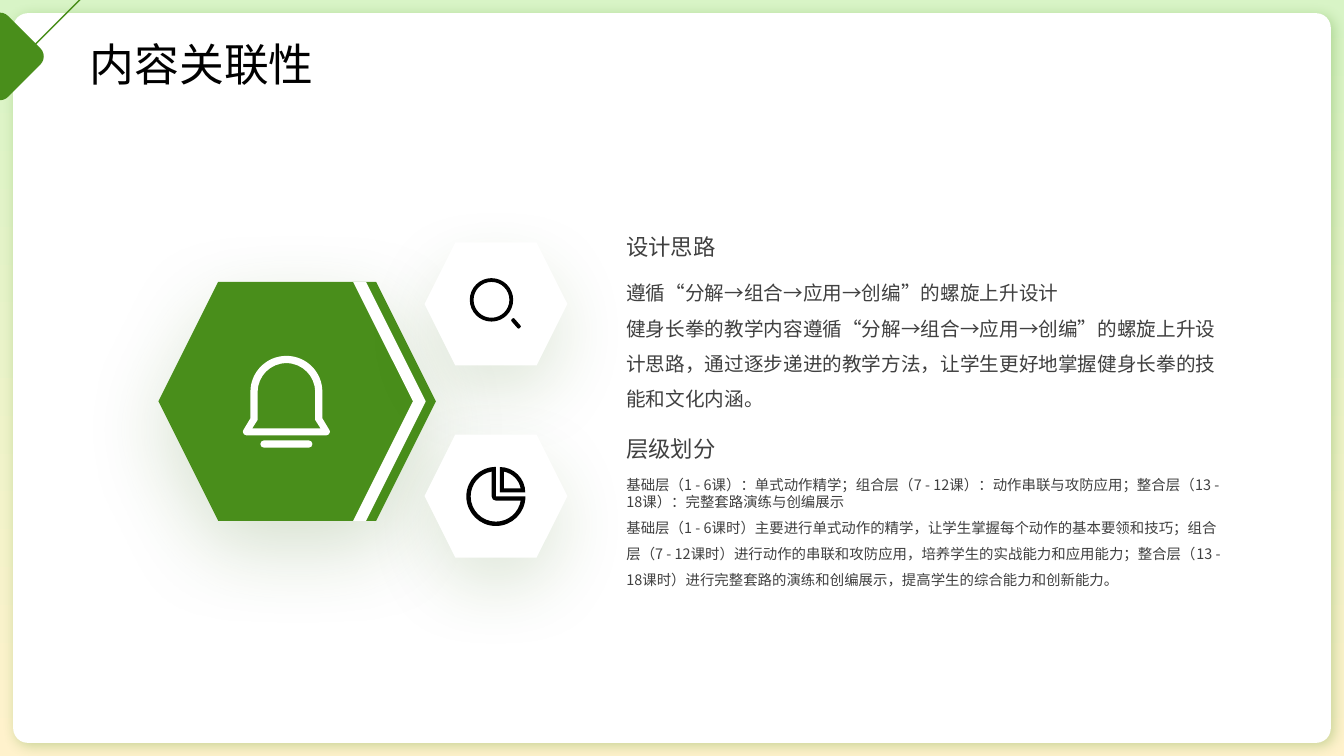
from dataclasses import dataclass
from itertools import chain
from math import cos, radians, sin, tan

from lxml.etree import SubElement
from pptx import Presentation
from pptx.dml.color import RGBColor
from pptx.enum.shapes import MSO_SHAPE
from pptx.enum.text import MSO_ANCHOR, PP_ALIGN
from pptx.oxml.ns import qn
from pptx.util import Pt


@dataclass(frozen=True)
class Theme:
    font: str = "Noto Sans CJK SC"
    green: str = "498E1B"
    shade: str = "376B14"
    white: str = "FFFFFF"
    black: str = "000000"
    gray: str = "404040"
    sand: str = "FFF2CC"
    mint: str = "D8F4C6"
    title: float = 32
    heading: float = 16
    body: float = 14
    detail: float = 10.3


THEME = Theme()

DESIGN_TEXT = (
    "遵循“分解→组合→应用→创编”的螺旋上升设计",
    "健身长拳的教学内容遵循“分解→组合→应用→创编”的螺旋上升设计思路，"
    "通过逐步递进的教学方法，让学生更好地掌握健身长拳的技能和文化内涵。",
)
LEVEL_TEXT = (
    "基础层（1 - 6课）：单式动作精学；组合层（7 - 12课）：动作串联与攻防应用；"
    "整合层（13 - 18课）：完整套路演练与创编展示",
    "基础层（1 - 6课时）主要进行单式动作的精学，让学生掌握每个动作的基本要领和技巧；"
    "组合层（7 - 12课时）进行动作的串联和攻防应用，培养学生的实战能力和应用能力；"
    "整合层（13 - 18课时）进行完整套路的演练和创编展示，提高学生的综合能力和创新能力。",
)


def write_text(shape, lines, size, color=THEME.gray, anchor=MSO_ANCHOR.TOP, spacings=(1.5,)):
    frame = shape.text_frame
    frame.word_wrap = True
    frame.vertical_anchor = anchor
    frame.margin_left = frame.margin_right = frame.margin_top = frame.margin_bottom = 0
    frame.text = "\n".join(lines)
    for paragraph, spacing in zip(frame.paragraphs, spacings):
        paragraph.alignment = PP_ALIGN.LEFT
        paragraph.line_spacing = spacing
        font = paragraph.runs[0].font
        font.size = Pt(size)
        font.name = THEME.font
        font.color.rgb = RGBColor.from_string(color)
        SubElement(font._element, qn("a:ea"), typeface=THEME.font)


def add_text(slide, top, height, lines, **text_format):
    shape = slide.shapes.add_textbox(Pt(447.4), Pt(top), Pt(425.5), Pt(height))
    write_text(shape, lines, **text_format)


def paint(shape, color):
    shape.shadow.inherit = False
    shape.fill.solid()
    shape.fill.fore_color.rgb = RGBColor.from_string(color)
    shape.line.fill.background()


def add_panel(slide, kind, box, color):
    shape = slide.shapes.add_shape(kind, *map(Pt, box))
    paint(shape, color)
    return shape


def cast_shadow(shape, color, opacity, blur, distance, angle):
    effects = shape._element.spPr.find(qn("a:effectLst"))
    shadow = SubElement(
        effects, qn("a:outerShdw"), blurRad=str(Pt(blur)), dist=str(Pt(distance)),
        dir=str(angle * 60000), algn="ctr", rotWithShape="0",
    )
    tint = SubElement(shadow, qn("a:srgbClr"), val=color)
    SubElement(tint, qn("a:alpha"), val=str(opacity * 1000))


def bend_segment(segment, controls, shape):
    segment.tag = qn("a:cubicBezTo")
    for point in list(segment):
        segment.remove(point)
    for x, y in zip(controls[::2], controls[1::2]):
        SubElement(segment, qn("a:pt"), x=str(Pt(x) - shape.left), y=str(Pt(y) - shape.top))


def add_outline(slide, color, *contours):
    ends = [[(Pt(step[-2]), Pt(step[-1])) for step in contour] for contour in contours]
    builder = slide.shapes.build_freeform(*ends[0][0], scale=1.0)
    for index, points in enumerate(ends):
        if index:
            builder.move_to(*points[0])
        builder.add_line_segments(points[1:], close=True)
    shape = builder.convert_to_shape()
    segments = list(shape._element.iter(qn("a:moveTo"), qn("a:lnTo")))
    for segment, step in zip(segments, chain(*contours)):
        if len(step) == 6:
            bend_segment(segment, step, shape)
    paint(shape, color)
    return shape


def arc(x, y, radius, start, end):
    low, high = sorted((start, end))
    quarters = [angle for angle in range(-360, 721, 90) if low < angle < high]
    stops = [low, *quarters, high]
    if start > end:
        stops.reverse()
    steps = [(x + radius * cos(radians(start)), y + radius * sin(radians(start)))]
    for first, last in zip(stops, stops[1:]):
        a, b = radians(first), radians(last)
        pull = 4 / 3 * tan((b - a) / 4)
        steps.append((
            x + radius * (cos(a) - pull * sin(a)), y + radius * (sin(a) + pull * cos(a)),
            x + radius * (cos(b) + pull * sin(b)), y + radius * (sin(b) - pull * cos(b)),
            x + radius * cos(b), y + radius * sin(b),
        ))
    return steps


def add_magnifier(slide, x, y):
    handle = arc(x + 15.4, y + 14.4, 1.4, 139, 319) + arc(x + 19.6, y + 19.2, 1.4, -41, 139)
    add_outline(slide, THEME.black, arc(x, y, 12.8, 0, 360), arc(x, y, 15.5, 0, 360), handle)


def add_pie(slide, x, y):
    wedge_x, wedge_y = x + 2.8, y - 2.8
    add_outline(
        slide, THEME.black,
        [(x + 5.7, y - 5.7)] + arc(wedge_x, wedge_y, 15.2, 349, 281),
        arc(x, y, 18, 260.4, 9.6) + [(x, y + 3), (x - 1.7, y + 3, x - 3, y + 1.7, x - 3, y)],
        [(wedge_x, wedge_y)] + arc(wedge_x, wedge_y, 18.2, 270, 360),
        [(x, y)] + arc(x, y, 21.1, 0, 270),
    )


def add_bell(slide, x, y):
    base = arc(x - 16, y + 37.3, 2.6, 90, 270) + arc(x + 16, y + 37.3, 2.6, -90, 90)
    opening = arc(x, y, 20.5, 180, 360) + [
        (x + 20.5, y + 20), (x + 24.4, y + 26.1), (x - 24.4, y + 26.1), (x - 20.5, y + 20)
    ]
    body = (
        arc(x, y, 25.7, 180, 360) + [(x + 25.7, y + 18.9)]
        + arc(x + 28.6, y + 28.6, 2.5, -30, 90)
        + arc(x - 28.6, y + 28.6, 2.5, 90, 210) + [(x - 25.7, y + 18.9)]
    )
    add_outline(slide, THEME.white, base, opening, body)


def add_corner(slide):
    edge = add_outline(
        slide, THEME.green, [(43.9, 36)] + arc(-12.9, 14.4, 21.6, 90, 180) + [(-34.5, -42.4)]
    )
    edge.fill.background()
    edge.line.color.rgb = RGBColor.from_string(THEME.green)
    edge.line.width = Pt(1)
    edge.rotation = 315
    diamond = add_panel(slide, MSO_SHAPE.ROUNDED_RECTANGLE, (-24.5, 15.8, 49, 49), THEME.green)
    diamond.rotation = 45


def add_backdrop(slide):
    backdrop = add_panel(slide, MSO_SHAPE.RECTANGLE, (0, 0, 960, 540), THEME.sand)
    backdrop.fill.gradient()
    backdrop.fill.gradient_angle = 90
    for stop, color in zip(backdrop.fill.gradient_stops, (THEME.sand, THEME.mint)):
        stop.color.rgb = RGBColor.from_string(color)
    card = add_panel(slide, MSO_SHAPE.ROUNDED_RECTANGLE, (9.4, 9.4, 941.2, 521.2), THEME.white)
    card.adjustments[0] = 0.02
    cast_shadow(card, THEME.green, 30, 10, 3, 45)


def add_hexagon(slide, box, color, opacity, blur):
    hexagon = add_panel(slide, MSO_SHAPE.HEXAGON, box, color)
    cast_shadow(hexagon, THEME.shade, opacity, blur, 20, 90)


def place_title(slide, text):
    title = slide.shapes.title
    title.left, title.top, title.width, title.height = map(Pt, (64.1, 18.7, 612.7, 33.8))
    write_text(title, [text], size=THEME.title, color=THEME.black, anchor=MSO_ANCHOR.MIDDLE)
    slide.shapes.element.append(title.element)


def main():
    presentation = Presentation()
    presentation.slide_width, presentation.slide_height = Pt(960), Pt(540)
    slide = presentation.slides.add_slide(presentation.slide_layouts[5])

    add_backdrop(slide)
    add_hexagon(slide, (113.2, 201.3, 198.2, 170.8), THEME.green, 20, 60)
    for top in (173.2, 310.4):
        add_hexagon(slide, (303.3, top, 102, 87.9), THEME.white, 15, 50)
    add_magnifier(slide, 351.1, 214.2)
    add_pie(slide, 354.2, 354.6)
    chevron = [(261.4, 201.3), (252.2, 201.3), (295, 286.7),
               (252.2, 372.1), (261.4, 372.1), (304.1, 286.7)]
    add_outline(slide, THEME.white, chevron)
    add_bell(slide, 204.6, 279.9)

    sections = (
        (153.4, "设计思路", 200.9, DESIGN_TEXT, THEME.body),
        (297.4, "层级划分", 339.8, LEVEL_TEXT, THEME.detail),
    )
    for heading_top, heading, body_top, body, size in sections:
        add_text(slide, heading_top, 36, [heading], size=THEME.heading, anchor=MSO_ANCHOR.MIDDLE)
        add_text(slide, body_top, 93.6, body, size=size, spacings=(1, 1.5))

    add_corner(slide)
    place_title(slide, "内容关联性")
    presentation.save("out.pptx")


if __name__ == "__main__":
    main()
